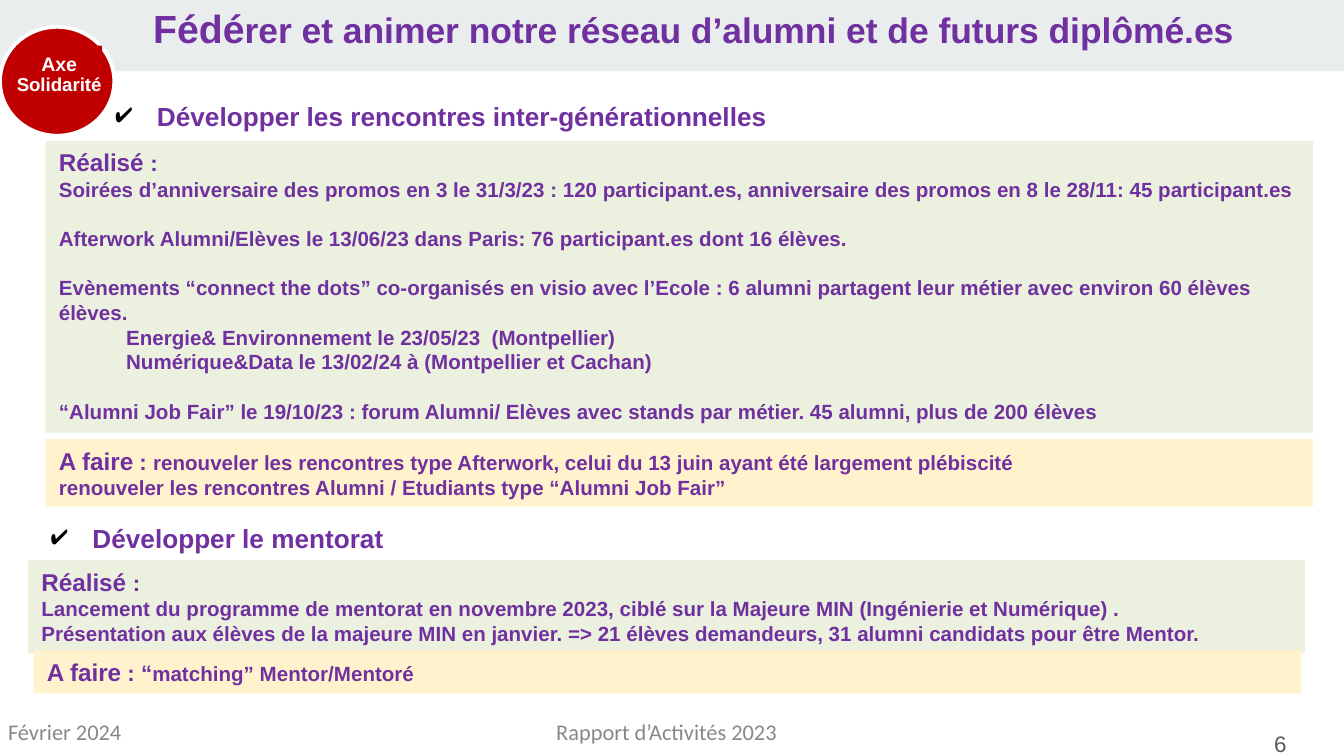
from dataclasses import dataclass
from typing import Any

from lxml import etree
from pptx import Presentation
from pptx.dml.color import RGBColor
from pptx.enum.shapes import MSO_SHAPE
from pptx.enum.text import MSO_ANCHOR, MSO_AUTO_SIZE, PP_ALIGN
from pptx.oxml.ns import qn
from pptx.util import Inches, Pt

RECT, OVAL = MSO_SHAPE.RECTANGLE, MSO_SHAPE.OVAL
TOP, MIDDLE = MSO_ANCHOR.TOP, MSO_ANCHOR.MIDDLE
LEFT, CENTER = PP_ALIGN.LEFT, PP_ALIGN.CENTER
FIXED = MSO_AUTO_SIZE.NONE

WIDTH = Inches(10)
HEIGHT = WIDTH * 9 // 16
COLS, ROWS = 100, 56.25
PURPLE, RED, WHITE, BLACK = "7030A0", "C00000", "FFFFFF", "000000"
GREEN, CREAM, MIST = "EBF1DE", "FFF2CC", "E9EDEE"
GREY, DARK = "888888", "595959"
PAD = (0.1, 0.05)
FLUSH = (0, 0)
GAP = 13.2  # points, one body line


@dataclass(frozen=True)
class Run:
    text: str
    size: float = 11
    color: str = PURPLE
    bold: bool = True
    font: str = "Arial"


@dataclass(frozen=True)
class Para:
    runs: tuple[Run, ...]
    before: float = 0
    indent: float = 0
    hang: float = 0
    align: Any = LEFT
    lead: float = 1
    mark: str = ""


@dataclass(frozen=True)
class Box:
    """Place in grid columns and rows, with optional fill and text."""
    col: float
    row: float
    wide: float
    high: float
    paras: tuple[Para, ...] = ()
    fill: str = ""
    line: str = ""
    kind: Any = RECT
    pad: tuple[float, float] = PAD
    anchor: Any = TOP


def rgb(code: str) -> RGBColor:
    return RGBColor.from_string(code)


def place(box: Box) -> tuple[int, int, int, int]:
    col, row = WIDTH / COLS, HEIGHT / ROWS
    return (round(box.col * col), round(box.row * row),
            round(box.wide * col), round(box.high * row))


def add_mark(para: Any, mark: str) -> None:
    props = para._p.get_or_add_pPr()
    tint = etree.SubElement(props, qn("a:buClr"))
    etree.SubElement(tint, qn("a:srgbClr"), val=BLACK)
    etree.SubElement(props, qn("a:buChar"), char=mark)


def write(frame: Any, box: Box) -> None:
    frame.word_wrap = True
    frame.auto_size = FIXED
    frame.vertical_anchor = box.anchor
    frame.margin_left = frame.margin_right = Inches(box.pad[0])
    frame.margin_top = frame.margin_bottom = Inches(box.pad[1])
    for index, item in enumerate(box.paras):
        para = frame.add_paragraph() if index else frame.paragraphs[0]
        para.alignment = item.align
        para.line_spacing = item.lead
        if item.before:
            para.space_before = Pt(item.before)
        props = para._p.get_or_add_pPr()
        props.set("marL", str(Inches(item.indent)))
        props.set("indent", str(Inches(item.hang)))
        if item.mark:
            add_mark(para, item.mark)
        for part in item.runs:
            run = para.add_run()
            run.text = part.text
            run.font.name = part.font
            run.font.size = Pt(part.size)
            run.font.bold = part.bold
            run.font.color.rgb = rgb(part.color)


def draw(shapes: Any, box: Box) -> Any:
    if not box.fill:
        shape = shapes.add_textbox(*place(box))
    else:
        shape = shapes.add_shape(box.kind, *place(box))
        shape.shadow.inherit = False
        shape.fill.solid()
        shape.fill.fore_color.rgb = rgb(box.fill)
        if box.line:
            shape.line.color.rgb = rgb(box.line)
            shape.line.width = Pt(2)
        else:
            shape.line.fill.background()
    if box.paras:
        write(shape.text_frame, box)
    return shape


def body(text: str, before: float = 0, indent: float = 0) -> Para:
    return Para((Run(text),), before, indent)


def done() -> Para:
    return Para((Run("Réalisé ", 13), Run(":", 12)))


def todo(text: str, link: str = " : ") -> Para:
    return Para((Run("A faire", 13), Run(link, 12), Run(text)))


def head(col: float, row: float, text: str) -> Box:
    para = Para((Run(text, 14),), indent=0.31, hang=-0.31, mark="✔")
    return Box(col, row, 89.2, 3.4, (para,))


def foot(col: float, row: float, wide: float, text: str, align: Any = LEFT,
         color: str = GREY, font: str = "Calibri", indent: float = 0) -> Box:
    run = Run(text, 12, color, False, font)
    para = Para((run,), indent=indent, align=align)
    return Box(col, row, wide, 2, (para,), pad=FLUSH)


BAND = Box(0, 0, COLS, 5.3, fill=MIST)
TITLE = Box(11.3, 0.3, 87.8, 3.6, (Para((
    Run("Fédé", 21),
    Run("rer et animer notre réseau d’alumni et de futurs diplômé.es", 19),
), indent=0.01),), pad=FLUSH)
BADGE = (
    Box(0, 2, 8.5, 8.1, fill=RED, line=WHITE, kind=OVAL),
    Box(1.2, 3.4, 6.4, 4.4, (Para((
        Run("Axe ", 10.5, WHITE), Run("Solidarité", 10, WHITE),
    ), align=CENTER, lead=0.9),), RED, pad=FLUSH, anchor=MIDDLE),
)
BOXES = (
    head(7.6, 7, "Développer les rencontres inter-générationnelles"),
    Box(3.4, 10.5, 94.3, 21.7, (
        done(),
        body("Soirées d’anniversaire des promos en 3 le 31/3/23 : 120 participant.es, "
             "anniversaire des promos en 8 le 28/11: 45 participant.es"),
        body("Afterwork Alumni/Elèves le 13/06/23 dans Paris: 76 participant.es "
             "dont 16 élèves.", GAP),
        body("Evènements “connect the dots” co-organisés en visio avec l’Ecole : "
             "6 alumni partagent leur métier avec environ 60 élèves élèves.", GAP),
        body("Energie& Environnement le 23/05/23  (Montpellier)", indent=0.5),
        body("Numérique&Data le 13/02/24 à (Montpellier et Cachan)", indent=0.5),
        body("“Alumni Job Fair” le 19/10/23 : forum Alumni/ Elèves avec stands "
             "par métier. 45 alumni, plus de 200 élèves", GAP),
    ), GREEN),
    Box(3.4, 32.7, 94.3, 5, (
        todo("renouveler les rencontres type Afterwork, celui du 13 juin ayant été "
             "largement plébiscité"),
        body("renouveler les rencontres Alumni / Etudiants type “Alumni Job Fair”"),
    ), CREAM),
    head(2.8, 38.4, "Développer le mentorat"),
    Box(2.1, 41.7, 95, 6.9, (
        done(),
        body("Lancement du programme de mentorat en novembre 2023, ciblé sur la "
             "Majeure MIN (Ingénierie et Numérique) ."),
        body("Présentation aux élèves de la majeure MIN en janvier. => 21 élèves "
             "demandeurs, 31 alumni candidats pour être Mentor."),
    ), GREEN),
    Box(2.5, 48.4, 94.3, 3.2, (todo("matching” Mentor/Mentoré", " : “"),), CREAM),
    foot(0.6, 53.4, 21.8, "Février 2024"),
    foot(26.7, 53.4, 45.8, "Rapport d’Activités 2023", CENTER),
    foot(94.5, 54.3, 3.2, "6", color=DARK, font="Arial", indent=0.03),
)


def main() -> None:
    deck = Presentation()
    deck.slide_width, deck.slide_height = WIDTH, HEIGHT
    slide = deck.slides.add_slide(deck.slide_layouts[5])
    title = slide.shapes.title
    title.left, title.top, title.width, title.height = place(TITLE)
    write(title.text_frame, TITLE)
    band = draw(slide.shapes, BAND)
    title.element.addprevious(band.element)
    group = slide.shapes.add_group_shape()
    for box in BADGE:
        draw(group.shapes, box)
    for box in BOXES:
        draw(slide.shapes, box)
    deck.save("out.pptx")


if __name__ == "__main__":
    main()
